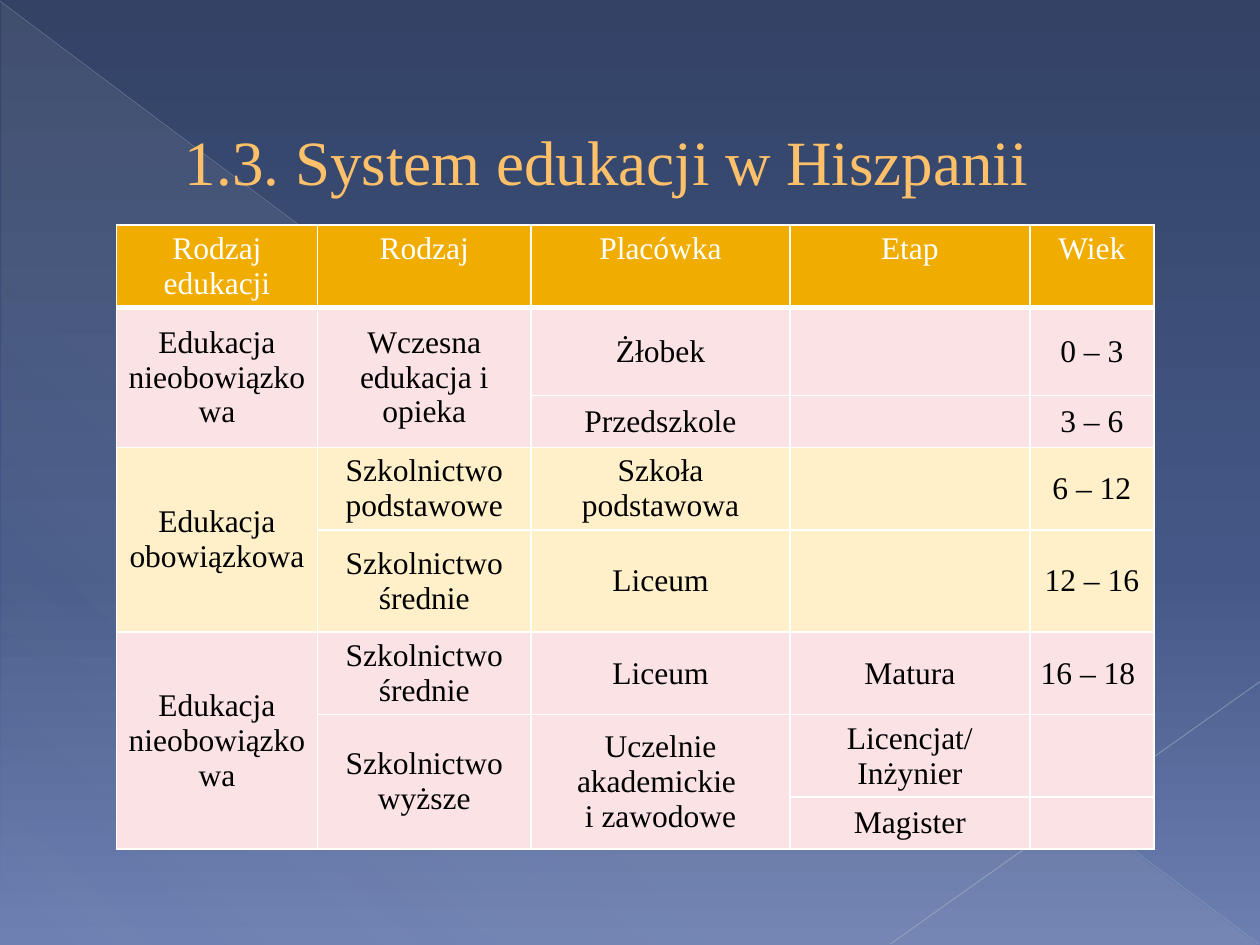
from lxml import etree
from pptx import Presentation
from pptx.dml.color import RGBColor
from pptx.enum import shapes, text
from pptx.oxml.ns import qn
from pptx.util import Pt

FACE = "Times New Roman"
WHITE = RGBColor(0xFF, 0xFF, 0xFF)
BLACK = RGBColor(0, 0, 0)
PEACH = RGBColor(0xFF, 0xC0, 0x6A)
BROWN = RGBColor(0xA6, 0x78, 0x00)
GOLD = RGBColor(0xF0, 0xAD, 0x00)
PINK = RGBColor(0xFA, 0xE2, 0xE5)
CREAM = RGBColor(0xFF, 0xF0, 0xC9)
NAVY = RGBColor(0x33, 0x42, 0x65)
BLUE = RGBColor(0x44, 0x58, 0x87)
SKY = RGBColor(0x6C, 0x7F, 0xB1)
GREY = RGBColor(0xD4, 0xD4, 0xD6)
MIST = RGBColor(0xB9, 0xBD, 0xC8)
PALE = RGBColor(0xC1, 0xC4, 0xCE)

COLS = [115, 122, 148, 137, 71]
TALL, LOW = 47.2, 29.5
ROWS = [TALL, 50.4, LOW, TALL, 58.4, TALL, TALL, LOW]
FILLS = [GOLD, PINK, PINK, CREAM, CREAM, PINK, PINK, PINK]
CELLS = [
    ["Rodzaj edukacji", "Rodzaj", "Placówka", "Etap", "Wiek"],
    ["Edukacja nieobowiązkowa", "Wczesna edukacja i opieka", "Żłobek", "", "0 – 3"],
    ["", "", "Przedszkole", "", "3 – 6"],
    ["Edukacja obowiązkowa", "Szkolnictwo podstawowe", "Szkoła podstawowa", "", "6 – 12"],
    ["", "Szkolnictwo średnie", "Liceum", "", "12 – 16"],
    ["Edukacja nieobowiązkowa", "Szkolnictwo średnie", "Liceum", "Matura", "16 – 18 "],
    ["", "Szkolnictwo wyższe", "Uczelnie akademickie \ni zawodowe",
     "Licencjat/Inżynier", ""],
    ["", "", "", "Magister", ""],
]
# First row, last row and column of each merged cell
SPANS = [(1, 2, 0), (1, 2, 1), (3, 4, 0), (5, 7, 0), (6, 7, 1), (6, 7, 2)]


def add_color(node, color, alpha=100):
    clr = etree.SubElement(node, qn("a:srgbClr"), val=str(color))
    if alpha < 100:
        etree.SubElement(clr, qn("a:alpha"), val=str(alpha * 1000))


def blend(fill, node, stops, angle):
    """Give a fill the (position, colour, alpha) stops; node holds the fill."""
    fill.gradient()
    grad = next(node.iter(qn("a:gradFill")))
    for child in list(grad):
        grad.remove(child)
    group = etree.SubElement(grad, qn("a:gsLst"))
    for pos, color, alpha in stops:
        add_color(etree.SubElement(group, qn("a:gs"), pos=str(pos * 1000)), color, alpha)
    etree.SubElement(grad, qn("a:lin"), ang=str(angle * 60000), scaled="0")


def make_line(tag, color, width):
    line = etree.Element(qn(tag), w=str(Pt(width)))
    add_color(etree.SubElement(line, qn("a:solidFill")), color)
    return line


def add_wedge(slide):
    wedge = slide.shapes.add_shape(
        shapes.MSO_SHAPE.RIGHT_TRIANGLE, Pt(0.7), Pt(1.4), Pt(718.6), Pt(538.6))
    wedge.shadow.inherit = False
    wedge.line.fill.background()
    stops = [(0, GREY, 10), (70, GREY, 8), (100, GREY, 1)]
    blend(wedge.fill, wedge.element.spPr, stops, 133)


def add_ray(slide, ends, color, width, alpha):
    ray = slide.shapes.add_connector(
        shapes.MSO_CONNECTOR.STRAIGHT, *[Pt(end) for end in ends])
    ray.line.color.rgb = color
    ray.line.width = Pt(width)
    props = ray.element.spPr
    clr = next(props.iter(qn("a:srgbClr")))
    etree.SubElement(clr, qn("a:alpha"), val=str(alpha * 1000))
    etree.SubElement(props, qn("a:effectLst"))


def set_title(slide, words):
    title = slide.shapes.title
    title.element.getparent().append(title.element)  # in front of the backdrop
    title.left, title.top = Pt(60.5), Pt(46)
    title.width, title.height = Pt(574), Pt(91.5)
    frame = title.text_frame
    frame.text = words
    frame.word_wrap = True
    frame.vertical_anchor = text.MSO_ANCHOR.MIDDLE
    par = frame.paragraphs[0]
    par.alignment = text.PP_ALIGN.LEFT
    props = par.runs[0].font
    props.name, props.size = FACE, Pt(36)
    props.color.rgb = PEACH
    pad = next(title.element.iter(qn("a:pPr")))
    pad.set("marL", str(Pt(38)))
    pad.set("indent", "0")
    next(title.element.iter(qn("a:rPr"))).insert(0, make_line("a:ln", BROWN, 0.5))


def style_cell(cell, words, fill, head):
    cell.text = words
    cell.margin_left = cell.margin_right = Pt(5)
    cell.margin_top = cell.margin_bottom = Pt(3.6)
    cell.vertical_anchor = text.MSO_ANCHOR.TOP if head else text.MSO_ANCHOR.MIDDLE
    cell.fill.solid()
    cell.fill.fore_color.rgb = fill
    for par in cell.text_frame.paragraphs:
        par.alignment = text.PP_ALIGN.CENTER
        par.font.name, par.font.size, par.font.bold = FACE, Pt(18), False
        par.font.color.rgb = WHITE if head else BLACK
    props = next(cell.text_frame._txBody.getparent().iter(qn("a:tcPr")))
    for rank, side in enumerate("LRTB"):
        width = 3 if head and side == "B" else 1
        props.insert(rank, make_line("a:ln" + side, WHITE, width))


def add_grid(slide):
    grid = slide.shapes.add_table(
        len(ROWS), len(COLS), Pt(66.5), Pt(128.5), Pt(sum(COLS)), Pt(sum(ROWS))).table
    grid.horz_banding = False
    for col, width in zip(grid.columns, COLS):
        col.width = Pt(width)
    for r, (height, fill, line) in enumerate(zip(ROWS, FILLS, CELLS)):
        grid.rows[r].height = Pt(height)
        for c, words in enumerate(line):
            style_cell(grid.cell(r, c), words, fill, r == 0)
    for first, last, c in SPANS:
        grid.cell(first, c).merge(grid.cell(last, c))


def main():
    deck = Presentation()
    deck.slide_width, deck.slide_height = Pt(720), Pt(540)
    slide = deck.slides.add_slide(deck.slide_layouts[5])
    stops = [(0, NAVY, 100), (60, BLUE, 100), (100, SKY, 100)]
    blend(slide.background.fill, slide.element, stops, 90)
    add_wedge(slide)
    add_ray(slide, (0, 0.7, 719.3, 539.3), MIST, 0.39, 35)
    add_ray(slide, (720, 389.5, 509, 539.3), PALE, 0.47, 45)
    set_title(slide, "1.3. System edukacji w Hiszpanii")
    add_grid(slide)
    deck.save("out.pptx")


if __name__ == "__main__":
    main()
